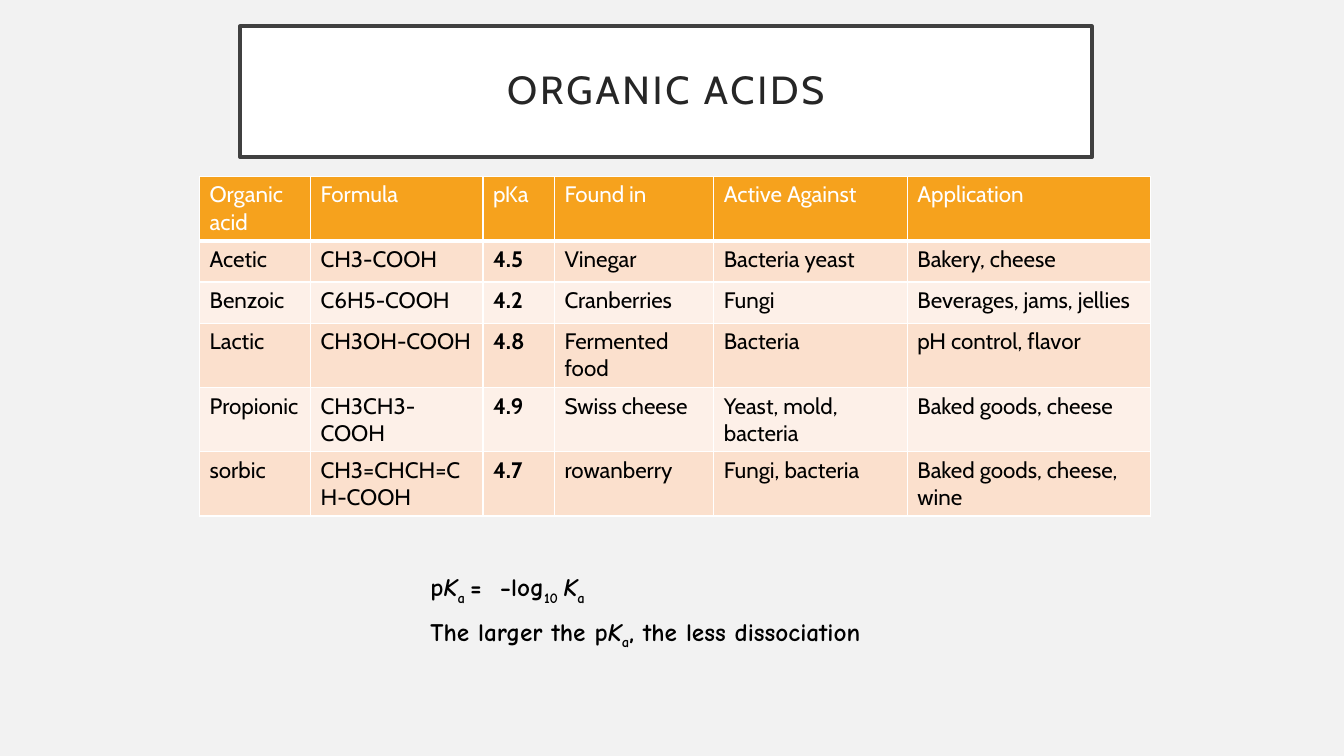
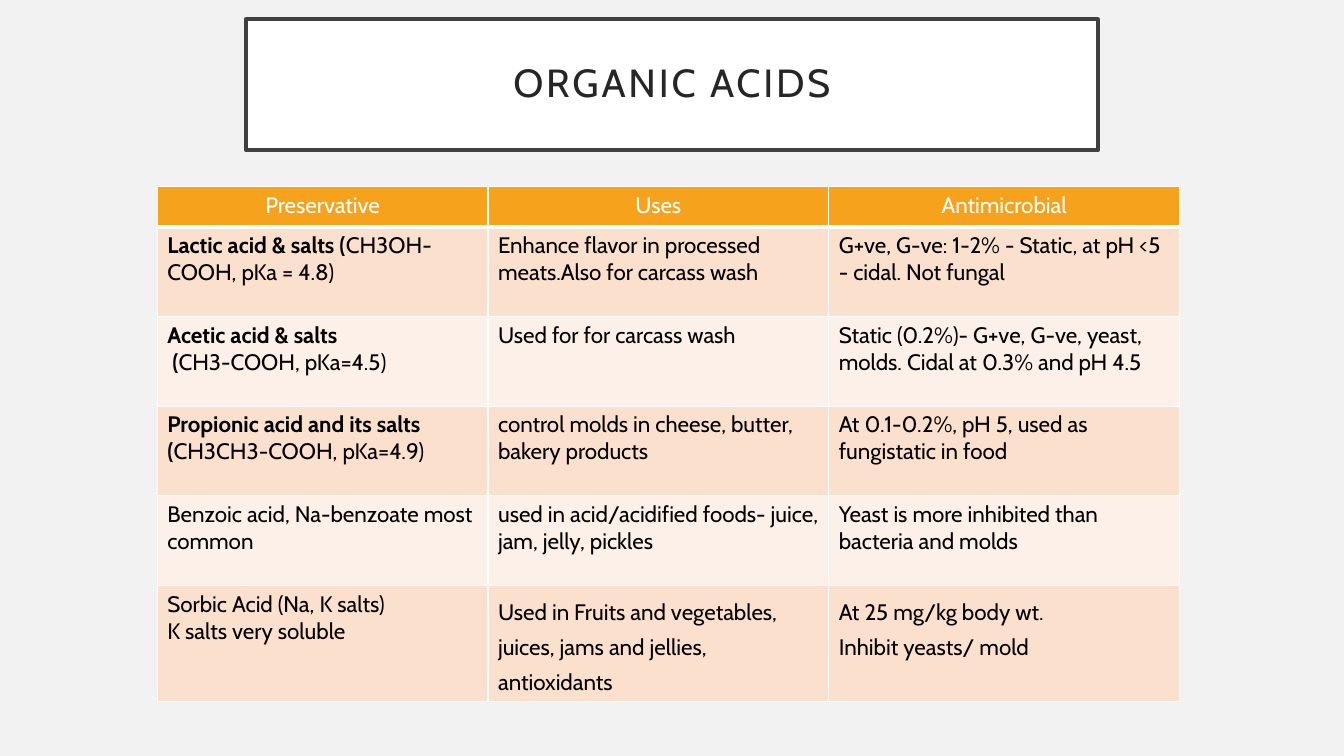
from dataclasses import dataclass

from lxml import etree
from pptx import Presentation
from pptx.dml.color import RGBColor
from pptx.enum.text import MSO_ANCHOR, MSO_AUTO_SIZE, PP_ALIGN
from pptx.oxml.ns import qn
from pptx.util import Inches, Pt

CENTER, LEFT = PP_ALIGN.CENTER, PP_ALIGN.LEFT
MIDDLE = MSO_ANCHOR.MIDDLE
FIXED, GROW = MSO_AUTO_SIZE.NONE, MSO_AUTO_SIZE.SHAPE_TO_FIT_TEXT
TITLE_ONLY = 5


@dataclass(frozen=True)
class Theme:
    page: str = "F2F2F2"
    white: str = "FFFFFF"
    frame: str = "404040"
    title: str = "262626"
    ink: str = "000000"
    header: str = "F6A21D"
    bands: tuple = ("FBE0CD", "FDF0E8")
    font: str = "Cabin"
    note_font: str = "Comic Neue"
    title_size: float = 28
    note_size: float = 18
    table_size: float = 16
    frame_width: float = 2.5
    grid_width: float = 1
    header_rule: float = 3


THEME = Theme()


@dataclass(frozen=True)
class Box:
    left: float
    top: float
    width: float
    height: float

    def inches(self):
        return [Inches(side) for side in (self.left, self.top, self.width, self.height)]


@dataclass(frozen=True)
class Span:
    text: str
    bold: bool = False
    italic: bool = False
    subscript: bool = False


@dataclass(frozen=True)
class Block:
    """Paragraphs, each a tuple of spans, with one line spacing."""
    paragraphs: tuple
    spacing: float = 1.0


def plain(*lines, bold=False, spacing=1.0):
    return Block(tuple((Span(line, bold),) for line in lines), spacing)


def paint(fill, color):
    fill.solid()
    fill.fore_color.rgb = RGBColor.from_string(color)


def write_block(frame, block, font, size, color, align=LEFT, tracking=0):
    """Fill a text frame run by run; tracking is in points."""
    for index, spans in enumerate(block.paragraphs):
        para = frame.add_paragraph() if index else frame.paragraphs[0]
        para.alignment = align
        para.line_spacing = block.spacing
        for span in spans:
            run = para.add_run()
            run.text = span.text
            run.font.name = font
            run.font.size = Pt(size)
            run.font.bold = span.bold
            run.font.italic = span.italic
            run.font.color.rgb = RGBColor.from_string(color)
            properties = run._r.get_or_add_rPr()
            if span.subscript:
                properties.set("baseline", "-25000")
            if tracking:
                properties.set("spc", str(tracking * 100))


def place_title(page, box, text):
    title = page.shapes.title
    title.left, title.top, title.width, title.height = box.inches()
    paint(title.fill, THEME.white)
    paint(title.line.fill, THEME.frame)
    title.line.width = Pt(THEME.frame_width)
    frame = title.text_frame
    frame.word_wrap = True
    frame.auto_size = FIXED
    frame.vertical_anchor = MIDDLE
    frame.margin_left = frame.margin_right = Inches(0.2)
    frame.margin_top = frame.margin_bottom = Inches(0.2)
    write_block(frame, plain(text, spacing=0.9), THEME.font, THEME.title_size,
                THEME.title, CENTER, tracking=2)


def border_cell(cell, bottom_width):
    properties = cell._tc.get_or_add_tcPr()
    for side in "LRTB":
        width = bottom_width if side == "B" else THEME.grid_width
        line = etree.SubElement(properties, qn(f"a:ln{side}"), w=str(Pt(width)))
        fill = etree.SubElement(line, qn("a:solidFill"))
        etree.SubElement(fill, qn("a:srgbClr"), val=THEME.white)


def place_table(page, left, top, widths, heights, rows, header_align=LEFT):
    """Draw a banded table whose first row is the header."""
    box = Box(left, top, sum(widths), sum(heights))
    table = page.shapes.add_table(len(rows), len(widths), *box.inches()).table
    for column, width in zip(table.columns, widths):
        column.width = Inches(width)
    for row, height in zip(table.rows, heights):
        row.height = Inches(height)
    for row_index, row in enumerate(rows):
        is_header = row_index == 0
        fill = THEME.header if is_header else THEME.bands[(row_index - 1) % 2]
        for column_index, content in enumerate(row):
            cell = table.cell(row_index, column_index)
            border_cell(cell, THEME.header_rule if is_header else THEME.grid_width)
            paint(cell.fill, fill)
            block = plain(content) if isinstance(content, str) else content
            write_block(cell.text_frame, block, THEME.font, THEME.table_size,
                        THEME.white if is_header else THEME.ink,
                        header_align if is_header else LEFT)


def place_note(page, box, block):
    frame = page.shapes.add_textbox(*box.inches()).text_frame
    frame.word_wrap = True
    frame.auto_size = GROW
    write_block(frame, block, THEME.note_font, THEME.note_size, THEME.ink)


def add_page(deck, title_box, title):
    page = deck.slides.add_slide(deck.slide_layouts[TITLE_ONLY])
    paint(page.background.fill, THEME.page)
    place_title(page, title_box, title)
    return page


ACIDS_HEADER = ("Organic acid", "Formula", "pKa", "Found in", "Active Against", "Application")
ACIDS = (
    ("Acetic", "CH3-COOH", "4.5", "Vinegar", "Bacteria yeast", "Bakery, cheese"),
    ("Benzoic", "C6H5-COOH", "4.2", "Cranberries", "Fungi", "Beverages, jams, jellies"),
    ("Lactic", "CH3OH-COOH", "4.8", "Fermented food", "Bacteria", "pH control, flavor"),
    ("Propionic", "CH3CH3-COOH", "4.9", "Swiss cheese", "Yeast, mold, bacteria",
     "Baked goods, cheese"),
    ("sorbic", "CH3=CHCH=CH-COOH", "4.7", "rowanberry", "Fungi, bacteria",
     "Baked goods, cheese, wine"),
)

PKA_NOTE = Block((
    (Span("p", True), Span("K", True, True), Span("a ", True, subscript=True),
     Span("=  −log", True), Span("10 ", True, subscript=True),
     Span("K", True, True), Span("a", True, subscript=True)),
    (Span("The larger the p", True), Span("K", True, True),
     Span("a", True, subscript=True), Span(", the less dissociation", True)),
), spacing=1.3)

PRESERVATIVES = (
    ("Preservative", "Uses", "Antimicrobial"),
    (Block(((Span("Lactic acid & salts (", True), Span("CH3OH-COOH, pKa = 4.8)")),)),
     "Enhance flavor in processed meats.Also for carcass wash",
     "G+ve, G-ve: 1-2% - Static, at pH <5 - cidal. Not fungal"),
    (Block(((Span("Acetic acid & salts", True),),
            (Span(" (", True), Span("CH3-COOH, pKa=4.5)")))),
     "Used for for carcass wash",
     "Static (0.2%)- G+ve, G-ve, yeast, molds. Cidal at 0.3% and pH 4.5"),
    (Block(((Span("Propionic acid and its salts (", True), Span("CH3CH3-COOH, pKa=4.9)")),)),
     "control molds in cheese, butter, bakery products",
     "At 0.1-0.2%, pH 5, used as fungistatic in food"),
    ("Benzoic acid, Na-benzoate most common",
     "used in acid/acidified foods- juice, jam, jelly, pickles",
     "Yeast is more inhibited than bacteria and molds"),
    (plain("Sorbic Acid (Na, K salts)", "K salts very soluble"),
     plain("Used in Fruits and vegetables, juices, jams and jellies, antioxidants", spacing=1.3),
     plain("At 25 mg/kg body wt.", "Inhibit yeasts/ mold", spacing=1.3)),
)


def build_acids_page(deck):
    page = add_page(deck, Box(2.38, 0.26, 8.45, 1.3), "ORGANIC ACIDS")
    rows = [ACIDS_HEADER]
    for name, formula, pka, *details in ACIDS:
        rows.append((name, formula, plain(pka, bold=True), *details))
    place_table(page, 1.98, 1.75, (1.1, 1.71, 0.71, 1.58, 1.92, 2.41),
                [0.41] * len(rows), rows)
    place_note(page, Box(4.17, 5.52, 5, 1.25), PKA_NOTE)


def build_preservatives_page(deck):
    page = add_page(deck, Box(2.44, 0.19, 8.45, 1.3), "ORGANIC ACIDS")
    place_table(page, 1.56, 1.85, (3.28, 3.38, 3.48), [0.4] + [0.89] * 4 + [1.09],
                PRESERVATIVES, CENTER)


def main():
    deck = Presentation()
    deck.slide_width, deck.slide_height = Inches(13.33), Inches(7.5)
    build_acids_page(deck)
    build_preservatives_page(deck)
    deck.save("out.pptx")


if __name__ == "__main__":
    main()
